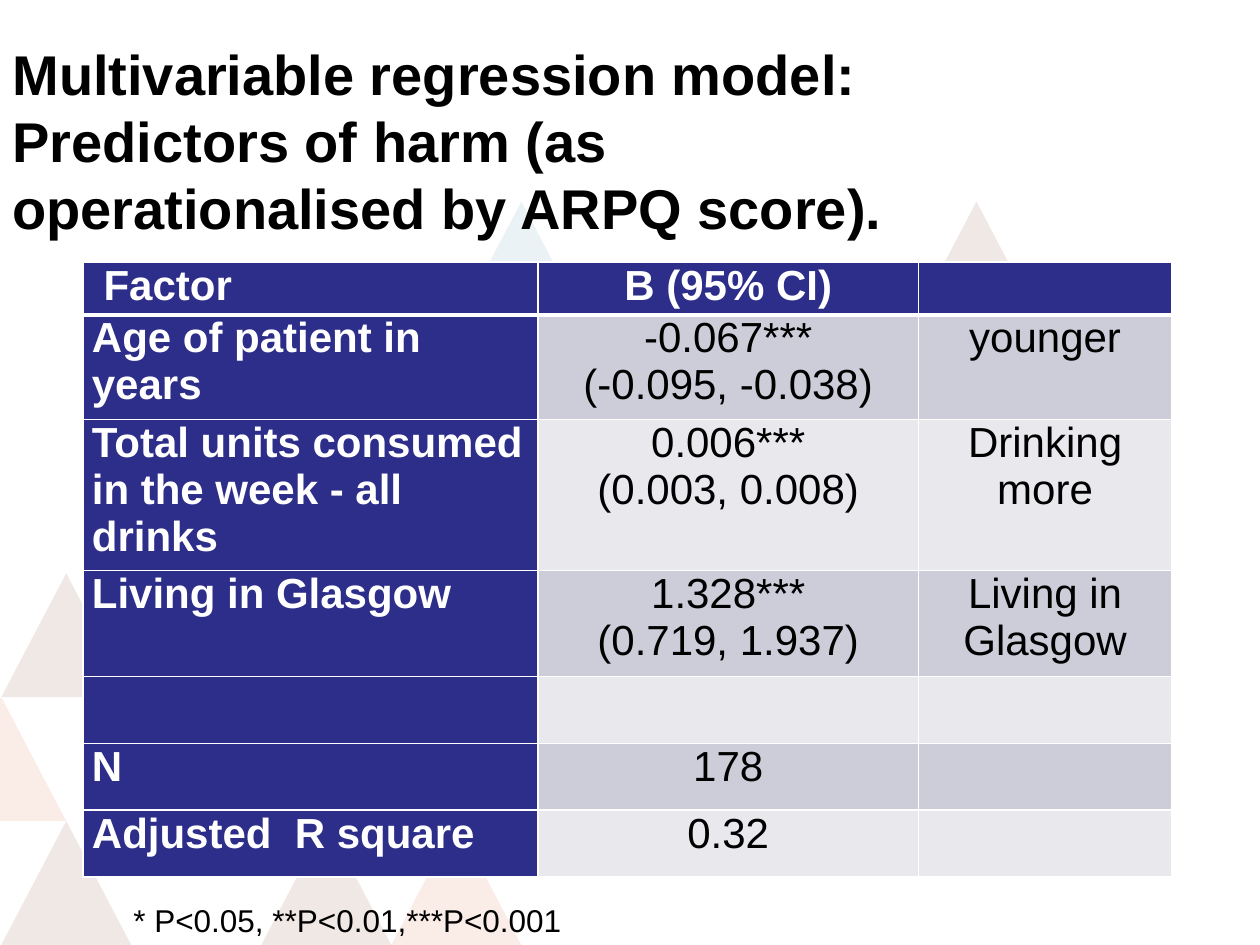
from dataclasses import dataclass

from lxml import etree
from pptx import Presentation
from pptx.dml.color import RGBColor
from pptx.enum.text import MSO_ANCHOR, PP_ALIGN
from pptx.oxml.ns import qn
from pptx.util import Inches, Pt

LEFT, CENTER = PP_ALIGN.LEFT, PP_ALIGN.CENTER
TOP, MIDDLE = MSO_ANCHOR.TOP, MSO_ANCHOR.MIDDLE


@dataclass(frozen=True)
class Theme:
    font: str = "Arial"
    title_size: int = 32
    table_size: int = 24
    note_size: int = 18
    ink: str = "000000"
    white: str = "FFFFFF"
    navy: str = "2D2D8A"
    bands: tuple = ("CDCDDA", "E8E8ED")
    rule: int = 1
    header_rule: int = 3


THEME = Theme()

# Triangle tints: colour and opacity in percent
CORAL, BROWN, ORANGE = ("EF613F", 16), ("6A2100", 10), ("F37F21", 15)
RUST, TEAL = ("D54A19", 10), ("3B88A5", 10)

# One dict per row of the pattern: half-triangle column -> tint
TRIANGLE_ROWS = [
    {7: TEAL, 14: BROWN},
    {8: CORAL, 10: BROWN, 15: RUST},
    {5: CORAL, 7: RUST, 13: CORAL},
    {0: BROWN, 2: CORAL, 6: BROWN, 8: ORANGE, 10: BROWN, 12: RUST},
    {-1: RUST, 3: ORANGE, 5: RUST, 9: CORAL},
    {0: BROWN, 4: BROWN, 6: RUST},
]

COLUMN_WIDTHS = [3.61, 3.02, 2.01]
ROWS = [
    (0.42, [" Factor", "B (95% CI)", ""]),
    (0.83, ["Age of patient in years", "-0.067***\n(-0.095, -0.038)", "younger"]),
    (1.2, ["Total units consumed in the week - all drinks",
           "0.006***\n(0.003, 0.008)", "Drinking more"]),
    (0.84, ["Living in Glasgow", "1.328***\n(0.719, 1.937)", "Living in Glasgow"]),
    (0.53, ["", "", ""]),
    (0.53, ["N", "178", ""]),
    (0.53, ["Adjusted  R square", "0.32", ""]),
]


def style_paragraph(paragraph, size, color, bold=False, align=LEFT):
    paragraph.alignment = align
    font_format = {"name": THEME.font, "size": Pt(size), "bold": bold}
    for attribute, value in font_format.items():
        setattr(paragraph.font, attribute, value)
    paragraph.font.color.rgb = RGBColor.from_string(color)


def add_triangle(slide, left, top, width, height, tint):
    color, opacity = tint
    builder = slide.shapes.build_freeform(Inches(left + width / 2), Inches(top))
    base = top + height
    builder.add_line_segments(
        [(Inches(left + width), Inches(base)), (Inches(left), Inches(base))], close=True)
    triangle = builder.convert_to_shape()
    triangle.shadow.inherit = False
    triangle.line.fill.background()
    triangle.fill.solid()
    triangle.fill.fore_color.rgb = RGBColor.from_string(color)
    tint_element = triangle.fill._xPr.find(f"{qn('a:solidFill')}/{qn('a:srgbClr')}")
    etree.SubElement(tint_element, qn("a:alpha"), val=str(opacity * 1000))


def add_triangle_pattern(slide, left, top, half_width, height):
    row_height = height / len(TRIANGLE_ROWS)
    for row, tints in enumerate(TRIANGLE_ROWS):
        for column, tint in tints.items():
            add_triangle(slide, left + column * half_width, top + row * row_height,
                         2 * half_width, row_height, tint)


def set_borders(cell, widths):
    """Draw white borders; widths maps a side tag to points."""
    properties = cell._tc.get_or_add_tcPr()
    for position, (side, width) in enumerate(widths.items()):
        border = etree.Element(qn(f"a:{side}"), w=str(Pt(width)))
        solid = etree.SubElement(border, qn("a:solidFill"))
        etree.SubElement(solid, qn("a:srgbClr"), val=THEME.white)
        properties.insert(position, border)


def fill_cell(cell, text, row, column):
    navy = row == 0 or column == 0
    cell_format = {"margin_left": Inches(0.07), "margin_right": Inches(0.07),
                   "margin_top": 0, "margin_bottom": 0, "vertical_anchor": TOP}
    for attribute, value in cell_format.items():
        setattr(cell, attribute, value)
    cell.fill.solid()
    cell.fill.fore_color.rgb = RGBColor.from_string(
        THEME.navy if navy else THEME.bands[(row - 1) % 2])
    set_borders(cell, {
        "lnL": THEME.rule, "lnR": THEME.rule,
        "lnT": THEME.header_rule if row == 1 else THEME.rule,
        "lnB": THEME.header_rule if row == 0 else THEME.rule})
    paragraph = cell.text_frame.paragraphs[0]
    paragraph.text = text
    style_paragraph(paragraph, THEME.table_size, THEME.white if navy else THEME.ink,
                    bold=navy, align=CENTER if column else LEFT)


def add_regression_table(slide, left, top):
    height = sum(row_height for row_height, _ in ROWS)
    table = slide.shapes.add_table(
        len(ROWS), len(COLUMN_WIDTHS), Inches(left), Inches(top),
        Inches(sum(COLUMN_WIDTHS)), Inches(height)).table
    for column, width in zip(table.columns, COLUMN_WIDTHS):
        column.width = Inches(width)
    for row, (row_height, texts) in enumerate(ROWS):
        table.rows[row].height = Inches(row_height)
        for column, text in enumerate(texts):
            fill_cell(table.cell(row, column), text, row, column)


def add_text(slide, box, text, size, bold=False, anchor=TOP, spacing=None):
    frame = slide.shapes.add_textbox(*map(Inches, box)).text_frame
    frame.word_wrap = True
    frame.vertical_anchor = anchor
    paragraph = frame.paragraphs[0]
    paragraph.text = text
    paragraph.line_spacing = spacing
    style_paragraph(paragraph, size, THEME.ink, bold)


def build_slide(presentation):
    slide = presentation.slides.add_slide(presentation.slide_layouts[6])
    add_triangle_pattern(slide, 0.01, 1.6, 0.516, 5.9)
    add_regression_table(slide, 0.66, 2.08)
    add_text(slide, (0, 0.35, 7.14, 1.52),
             "Multivariable regression model: Predictors of harm "
             "(as operationalised by ARPQ score).",
             THEME.title_size, bold=True, anchor=MIDDLE)
    add_text(slide, (0.96, 6.8, 8.51, 0.7), "* P<0.05, **P<0.01,***P<0.001",
             THEME.note_size, spacing=2.0)


def main():
    presentation = Presentation()
    presentation.slide_width, presentation.slide_height = Inches(10), Inches(7.5)
    build_slide(presentation)
    presentation.save("out.pptx")


if __name__ == "__main__":
    main()
